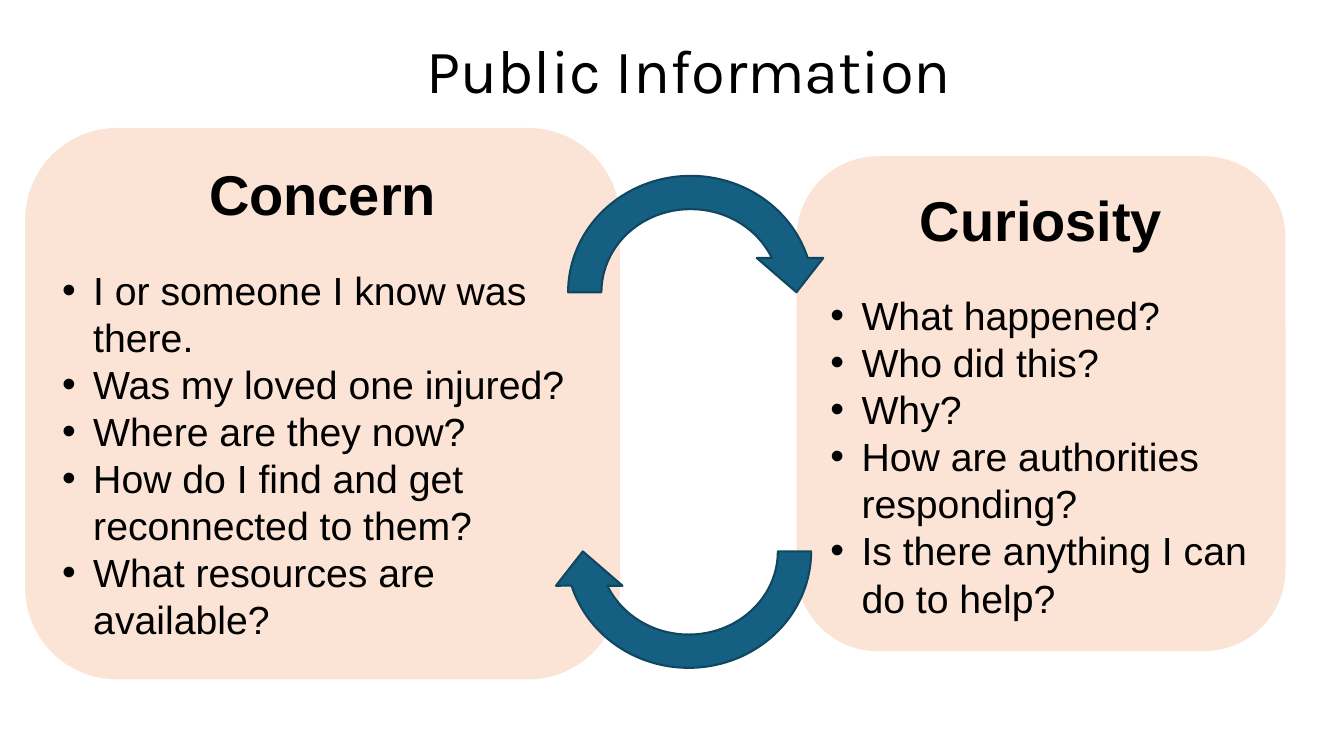
from dataclasses import dataclass

from lxml import etree
from pptx import Presentation
from pptx.dml.color import RGBColor
from pptx.enum.shapes import MSO_SHAPE
from pptx.enum.text import MSO_ANCHOR, MSO_AUTO_SIZE, PP_ALIGN
from pptx.oxml.ns import qn
from pptx.util import Inches, Pt

ROUNDED, ARROW = MSO_SHAPE.ROUNDED_RECTANGLE, MSO_SHAPE.CIRCULAR_ARROW
TOP, MIDDLE = MSO_ANCHOR.TOP, MSO_ANCHOR.MIDDLE
LEFT, CENTER = PP_ALIGN.LEFT, PP_ALIGN.CENTER
NO_FIT, GROW = MSO_AUTO_SIZE.NONE, MSO_AUTO_SIZE.SHAPE_TO_FIT_TEXT


@dataclass(frozen=True)
class Theme:
    """Colours, fonts and type sizes of the slide."""
    text: RGBColor = RGBColor.from_string("000000")
    panel: RGBColor = RGBColor.from_string("FBE3D6")
    arrow: RGBColor = RGBColor.from_string("156082")
    outline: RGBColor = RGBColor.from_string("104760")
    title_font: str = "Karla"
    body_font: str = "Arial"
    title: int = 44
    heading: int = 40
    body: int = 28
    heading_gap: int = 28


THEME = Theme()
PANELS = [
    ((0.25, 1.27, 5.9, 5.47), "Concern", [
        "I or someone I know was there.",
        "Was my loved one injured?",
        "Where are they now?",
        "How do I find and get reconnected to them?",
        "What resources are available?",
    ]),
    ((7.9, 1.55, 4.85, 4.91), "Curiosity", [
        "What happened?",
        "Who did this?",
        "Why?",
        "How are authorities responding?",
        "Is there anything I can do to help?",
    ]),
]
ARROWS = [((5.47, 1.58, 2.76, 2.64), 0), ((5.45, 4.15, 2.76, 2.64), 180)]


def set_all(target, values):
    """Set every attribute named in values on target."""
    for name, value in values.items():
        setattr(target, name, value)


def format_font(font, name, size, bold=False):
    """Apply typeface, size, weight and the text colour."""
    set_all(font, {"name": name, "size": Pt(size), "bold": bold})
    font.color.rgb = THEME.text


def add_bullet(p):
    """Give a paragraph a round bullet with a hanging indent."""
    pPr = p._p.get_or_add_pPr()
    indent = Inches(0.31)
    pPr.set("marL", str(indent))
    pPr.set("indent", str(-indent))
    etree.SubElement(pPr, qn("a:buFont")).set("typeface", THEME.body_font)
    etree.SubElement(pPr, qn("a:buChar")).set("char", "•")


def add_title(s, box, text):
    """Place and format the title placeholder."""
    title = s.shapes.title
    set_all(title, dict(zip(("left", "top", "width", "height"), map(Inches, box))))
    tf = title.text_frame
    tf.text = text
    set_all(tf, {"vertical_anchor": MIDDLE, "word_wrap": True, "auto_size": NO_FIT})
    p = tf.paragraphs[0]
    set_all(p, {"alignment": CENTER, "line_spacing": 0.9})
    format_font(p.runs[0].font, THEME.title_font, THEME.title)


def add_shape(s, kind, box, color):
    """Draw a filled preset shape without shadow or outline."""
    shape = s.shapes.add_shape(kind, *map(Inches, box))
    shape.shadow.inherit = False
    shape.fill.solid()
    shape.fill.fore_color.rgb = color
    shape.line.fill.background()
    return shape


def add_panel(s, box, heading, items):
    """Draw a rounded panel with a heading and a bulleted list."""
    tf = add_shape(s, ROUNDED, box, THEME.panel).text_frame
    set_all(tf, {"vertical_anchor": TOP, "word_wrap": True, "auto_size": GROW})
    p = tf.paragraphs[0]
    p.text = heading
    set_all(p, {"alignment": CENTER, "space_after": Pt(THEME.heading_gap)})
    format_font(p.runs[0].font, THEME.body_font, THEME.heading, True)
    for item in items:
        p = tf.add_paragraph()
        p.text = item
        p.alignment = LEFT
        add_bullet(p)
        format_font(p.runs[0].font, THEME.body_font, THEME.body)


def add_arrow(s, box, rotation):
    """Draw an outlined circular arrow."""
    arrow = add_shape(s, ARROW, box, THEME.arrow)
    arrow.rotation = rotation
    arrow.line.color.rgb = THEME.outline
    arrow.line.width = Pt(1.5)


def main():
    """Build and save the slide."""
    prs = Presentation()
    set_all(prs, {"slide_width": Inches(13.33), "slide_height": Inches(7.5)})
    s = prs.slides.add_slide(prs.slide_layouts[5])
    add_title(s, (3.76, 0.19, 6.15, 1.07), "Public Information")
    for box, heading, items in PANELS:
        add_panel(s, box, heading, items)
    for box, rotation in ARROWS:
        add_arrow(s, box, rotation)
    prs.save("out.pptx")


if __name__ == "__main__":
    main()
